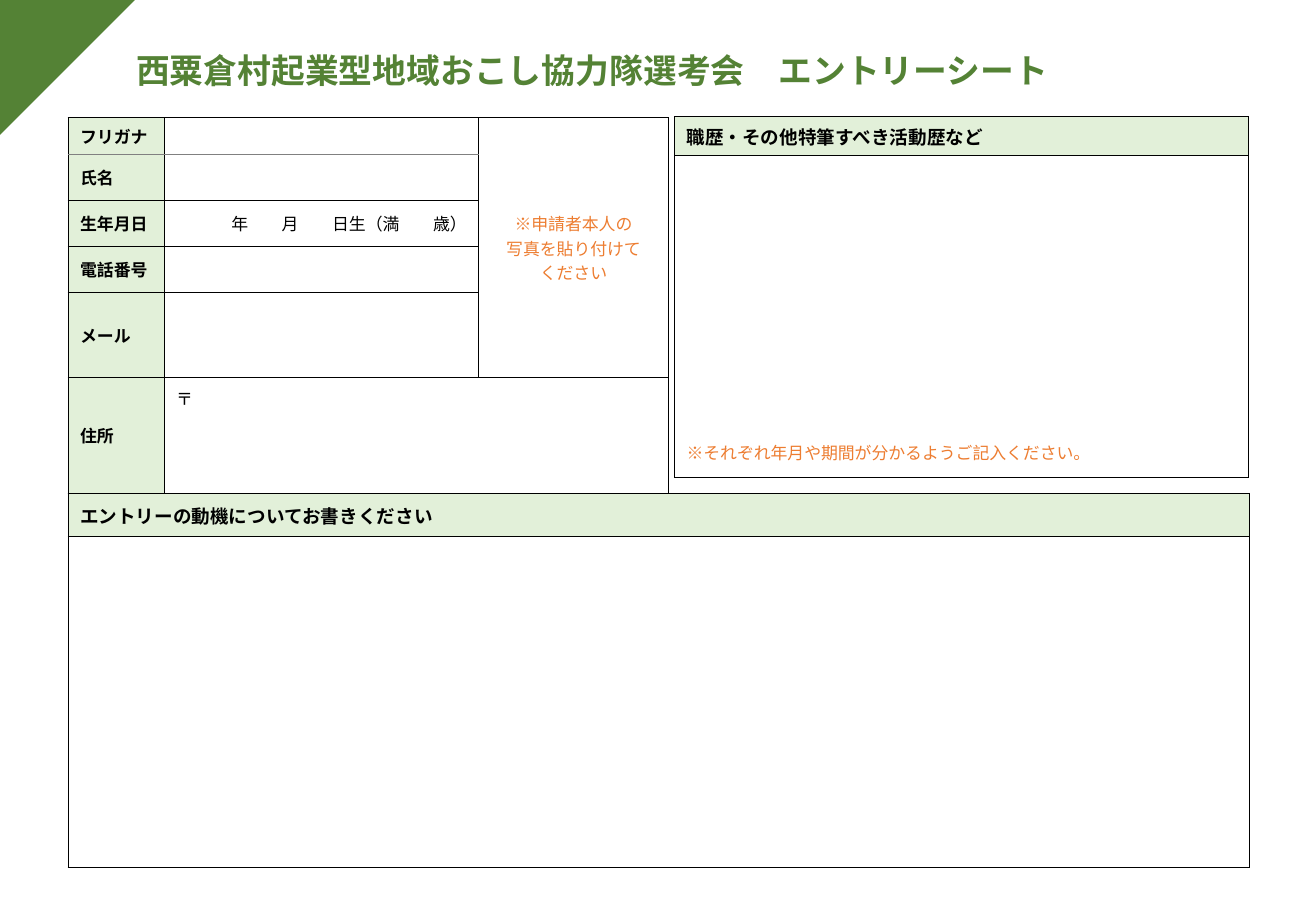
from pptx import Presentation
from pptx.dml.color import RGBColor
from pptx.enum.shapes import MSO_SHAPE
from pptx.enum.text import MSO_ANCHOR, MSO_AUTO_SIZE, PP_ALIGN
from pptx.oxml.ns import qn
from pptx.util import Inches, Pt
from lxml.etree import SubElement

FONT = "Noto Sans CJK JP"
COLORS = {
    "green": "548235",
    "label": "E2F0D9",
    "white": "FFFFFF",
    "text": "000000",
    "note": "ED7D31",
    "divider": "808080",
}
LABELS = ["フリガナ", "氏名", "生年月日", "電話番号", "メール", "住所"]


def color(name):
    return RGBColor.from_string(COLORS[name])


def format_text(text_frame, size, font_color="text", bold=False, align=PP_ALIGN.LEFT):
    for paragraph in text_frame.paragraphs:
        paragraph.alignment = align
        for run in paragraph.runs:
            run.font.size = Pt(size)
            run.font.bold = bold
            run.font.color.rgb = color(font_color)
            run.font.name = FONT
            SubElement(run._r.get_or_add_rPr(), qn("a:ea"), typeface=FONT)
        if not paragraph.runs:
            SubElement(paragraph._p, qn("a:endParaRPr"), sz=str(size * 100))


def add_borders(cell, top="text", bottom="text"):
    properties = cell._tc.get_or_add_tcPr()
    for side, name in (("L", "text"), ("R", "text"), ("T", top), ("B", bottom)):
        line = SubElement(properties, qn(f"a:ln{side}"), w=str(Pt(0.5)))
        fill = SubElement(line, qn("a:solidFill"))
        SubElement(fill, qn("a:srgbClr"), val=COLORS[name])


def fill_cell(cell, text, size=10, anchor=MSO_ANCHOR.MIDDLE, fill="white", **style):
    cell.text_frame.text = text
    format_text(cell.text_frame, size, **style)
    cell.vertical_anchor = anchor
    cell.fill.solid()
    cell.fill.fore_color.rgb = color(fill)


def add_grid(slide, left, top, widths, heights):
    frame = slide.shapes.add_table(
        len(heights), len(widths), Inches(left), Inches(top),
        Inches(sum(widths)), Inches(sum(heights)))
    table = frame.table
    table.first_row = table.horz_banding = False
    for column, width in zip(table.columns, widths):
        column.width = Inches(width)
    for row, height in zip(table.rows, heights):
        row.height = Inches(height)
    return table


def add_profile(slide):
    table = add_grid(slide, 0.56, 0.97, [0.79, 2.59, 1.56],
                     [0.3, 0.38, 0.38, 0.38, 0.7, 0.95])
    for index, label in enumerate(LABELS):
        for column in range(3):
            cell = table.cell(index, column)
            divided = column < 2
            add_borders(cell,
                        top="divider" if divided and index == 1 else "text",
                        bottom="divider" if divided and index == 0 else "text")
            if column:
                fill_cell(cell, "")
            else:
                fill_cell(cell, label, fill="label", bold=True)
    photo, address = table.cell(0, 2), table.cell(5, 1)
    photo.merge(table.cell(4, 2))
    address.merge(table.cell(5, 2))
    fill_cell(photo, "※申請者本人の\n写真を貼り付けて\nください",
              font_color="note", align=PP_ALIGN.CENTER)
    fill_cell(table.cell(2, 1), "年　　月　　日生（満　　歳）", align=PP_ALIGN.RIGHT)
    fill_cell(address, "〒", anchor=MSO_ANCHOR.TOP)
    address.margin_top = Inches(0.07)


def add_answer_box(slide, left, top, width, heights, heading, note=""):
    table = add_grid(slide, left, top, [width], heights)
    header, body = table.cell(0, 0), table.cell(1, 0)
    for cell in (header, body):
        add_borders(cell)
    fill_cell(header, heading, size=11, fill="label", bold=True)
    fill_cell(body, note, anchor=MSO_ANCHOR.BOTTOM, font_color="note")
    body.margin_bottom = Inches(0.11)


def add_corner(slide):
    shape = slide.shapes.add_shape(
        MSO_SHAPE.RIGHT_TRIANGLE, 0, Inches(-0.01), Inches(1.12), Inches(1.12))
    shape.rotation = 90
    shape.shadow.inherit = False
    shape.fill.solid()
    shape.fill.fore_color.rgb = color("green")
    shape.line.fill.background()


def set_title(slide, text):
    title = slide.shapes.title
    title.left, title.top = Inches(1.02), Inches(0.39)
    title.width, title.height = Inches(7.87), Inches(0.41)
    text_frame = title.text_frame
    text_frame.text = text
    text_frame.word_wrap = True
    text_frame.auto_size = MSO_AUTO_SIZE.NONE
    text_frame.vertical_anchor = MSO_ANCHOR.MIDDLE
    text_frame.paragraphs[0].line_spacing = 0.9
    format_text(text_frame, 20, font_color="green", bold=True)


def main():
    presentation = Presentation()
    presentation.slide_width = Inches(10.83)
    presentation.slide_height = Inches(7.5)
    slide = presentation.slides.add_slide(presentation.slide_layouts[5])
    set_title(slide, "西粟倉村起業型地域おこし協力隊選考会　エントリーシート")
    add_profile(slide)
    add_answer_box(slide, 5.55, 0.96, 4.72, [0.32, 2.65],
                   "職歴・その他特筆すべき活動歴など",
                   "※それぞれ年月や期間が分かるようご記入ください。")
    add_answer_box(slide, 0.56, 4.06, 9.72, [0.36, 2.72],
                   "エントリーの動機についてお書きください")
    add_corner(slide)
    presentation.save("out.pptx")


if __name__ == "__main__":
    main()
